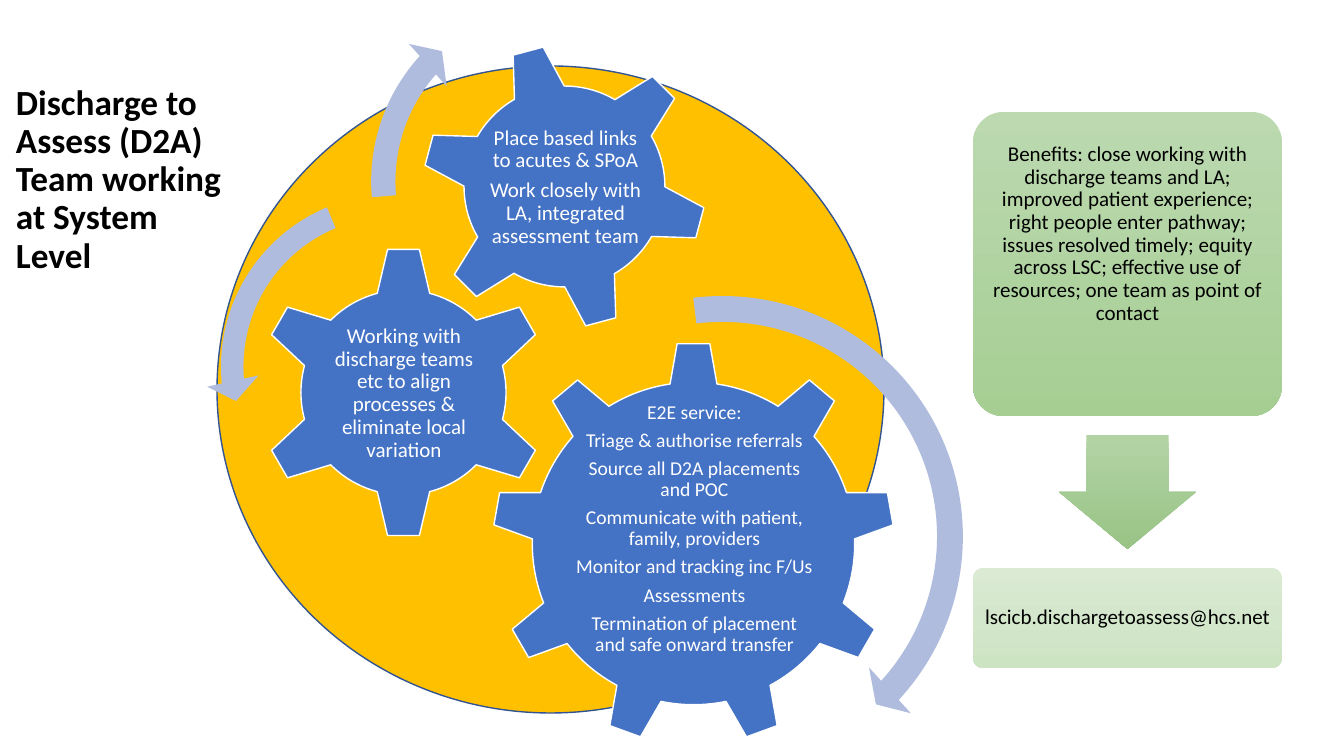
"""Build the Discharge to Assess slide: gears in a disc, with benefits and contact cards."""
from pptx import Presentation
from pptx.dml.color import RGBColor
from pptx.enum.shapes import MSO_SHAPE as Kind
from pptx.enum.text import MSO_ANCHOR as Anchor, PP_ALIGN as Align
from pptx.util import Pt

PX = 914400 / 100.8
BLACK = RGBColor(0x00, 0x00, 0x00)
WHITE = RGBColor(0xFF, 0xFF, 0xFF)
GOLD = RGBColor(0xFF, 0xC0, 0x00)
NAVY = RGBColor(0x32, 0x54, 0x91)
BLUE = RGBColor(0x44, 0x72, 0xC4)
LILAC = RGBColor(0xB0, 0xBC, 0xDE)
SAGE = RGBColor(0xBC, 0xD9, 0xB0), RGBColor(0xA6, 0xCE, 0x93)
LEAF = RGBColor(0xB3, 0xD3, 0xA5), RGBColor(0x99, 0xC4, 0x86)
MIST = RGBColor(0xDA, 0xEA, 0xD3), RGBColor(0xCD, 0xE4, 0xC3)

deck = Presentation()
deck.slide_width, deck.slide_height = round(1344 * PX), round(756 * PX)
slide = deck.slides.add_slide(deck.slide_layouts[6])


def draw(kind, box, fill, line=None, adj=(), turn=0):
    shape = slide.shapes.add_shape(kind, *(round(n * PX) for n in box))
    shape.shadow.inherit = False
    shape.rotation = turn
    for i, value in enumerate(adj):
        shape.adjustments[i] = value
    if isinstance(fill, RGBColor):
        shape.fill.solid()
        shape.fill.fore_color.rgb = fill
    else:
        shape.fill.gradient()
        shape.fill.gradient_angle = 270
        for stop, color in zip(shape.fill.gradient_stops, fill):
            stop.color.rgb = color
    if line:
        shape.line.color.rgb = line
        shape.line.width = Pt(1)
    else:
        shape.line.fill.background()


def write(text, box, size=15, color=WHITE, bold=False, align=Align.CENTER,
          pad=(2, 2, 2, 2)):
    frame = slide.shapes.add_textbox(*(round(n * PX) for n in box)).text_frame
    frame.word_wrap = True
    frame.vertical_anchor = Anchor.MIDDLE
    (frame.margin_left, frame.margin_top,
     frame.margin_right, frame.margin_bottom) = (round(n * PX) for n in pad)
    frame.text = text
    for para in frame.paragraphs:
        para.alignment = align
        para.line_spacing = 0.9
        para.space_after = Pt(0.35 * size)
        font = para.runs[0].font
        font.name, font.size, font.bold = "Calibri", Pt(size), bold
        font.color.rgb = color


write("Discharge to Assess (D2A) Team working at System Level", (6, 88, 229, 185),
      size=25.2, color=BLACK, bold=True, align=Align.LEFT, pad=(10, 5, 10, 5))

draw(Kind.OVAL, (217, 66, 667, 647), GOLD, NAVY)

gears = [
    (Kind.GEAR_9, (492, 342, 403, 403), 0, (574, 402, 241, 254), 14,
     ["E2E service:", "Triage & authorise referrals",
      "Source all D2A placements and POC",
      "Communicate with patient, family, providers",
      "Monitor and tracking inc F/Us", "Assessments",
      "Termination of placement and safe onward transfer"]),
    (Kind.GEAR_6, (257, 246, 293, 293), 0, (331, 321, 146, 145), 15,
     ["Working with discharge teams etc to align processes & eliminate local variation"]),
    (Kind.GEAR_6, (421, 43, 287, 287), 345, (485, 107, 161, 161), 15,
     ["Place based links to acutes & SPoA",
      "Work closely with LA, integrated assessment team"]),
]
for kind, box, turn, area, size, lines in gears:
    draw(kind, box, BLUE, WHITE, turn=turn)
    write("\n".join(lines), area, size=size)

arrows = [
    (Kind.CIRCULAR_ARROW, (464, 278, 517, 517), (0.05, 2.99, 25.55, 157.81, 0.06)),
    (Kind.LEFT_CIRCULAR_ARROW, (206, 179, 375, 375), (0.06, 4.3, 104.89, 148.38, 0.07)),
    (Kind.CIRCULAR_ARROW, (355, -21, 405, 405), (0.06, 3.94, 133.14, 105.08, 0.07)),
]
for kind, box, adj in arrows:
    draw(kind, box, LILAC, adj=adj)

draw(Kind.ROUNDED_RECTANGLE, (973, 112, 309, 304), SAGE, adj=[0.1])
write("Benefits: close working with discharge teams and LA; improved patient "
      "experience; right people enter pathway; issues resolved timely; equity "
      "across LSC; effective use of resources; one team as point of contact",
      (982, 121, 291, 286), color=BLACK, pad=(6, 6, 6, 66))
draw(Kind.DOWN_ARROW, (1059, 435, 137, 114), LEAF, adj=(0.6, 0.5))
draw(Kind.ROUNDED_RECTANGLE, (973, 568, 309, 100), MIST, adj=[0.1])
write("lscicb.dischargetoassess@hcs.net", (976, 571, 303, 94), color=BLACK,
      pad=(6, 6, 6, 6))

deck.save("out.pptx")
